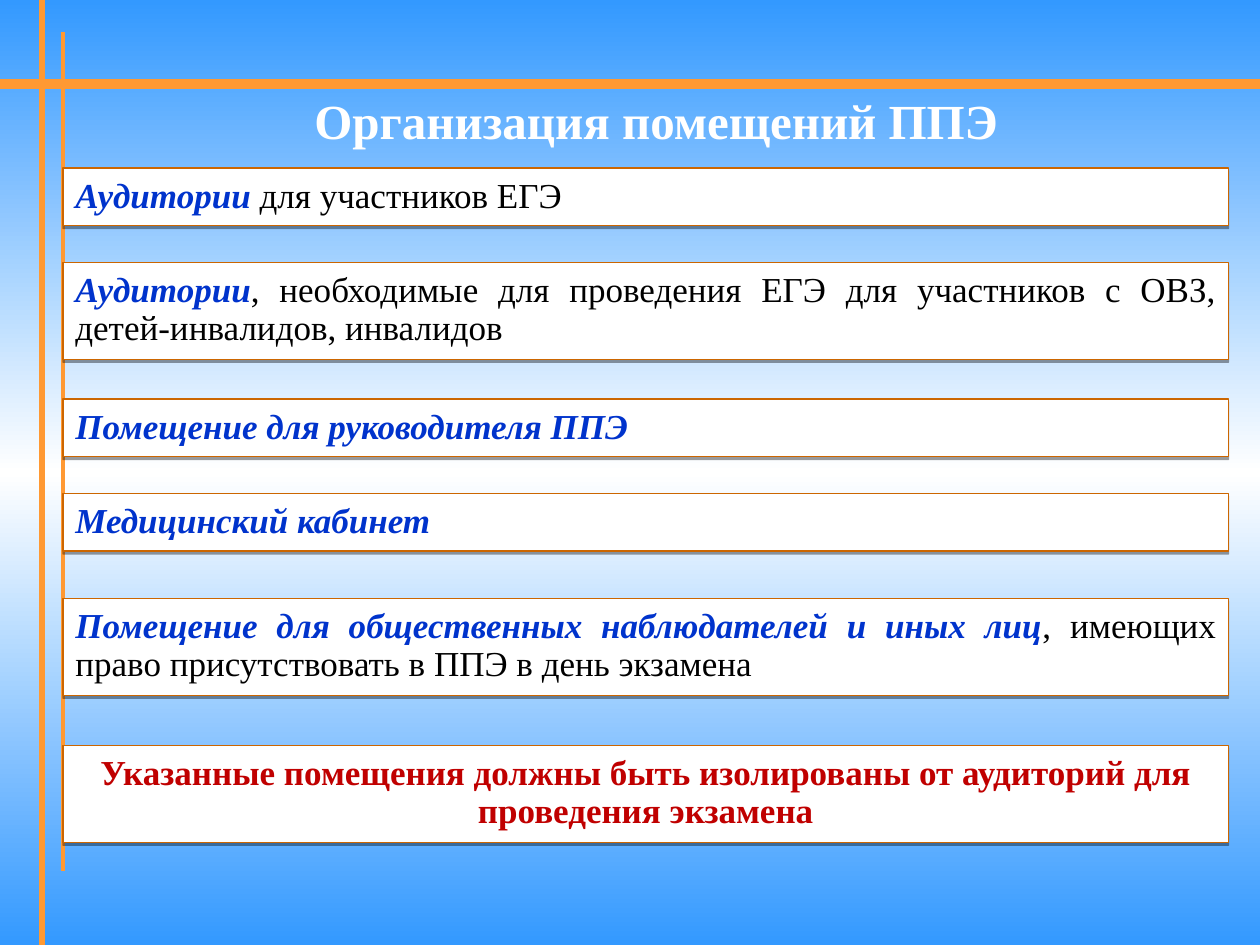
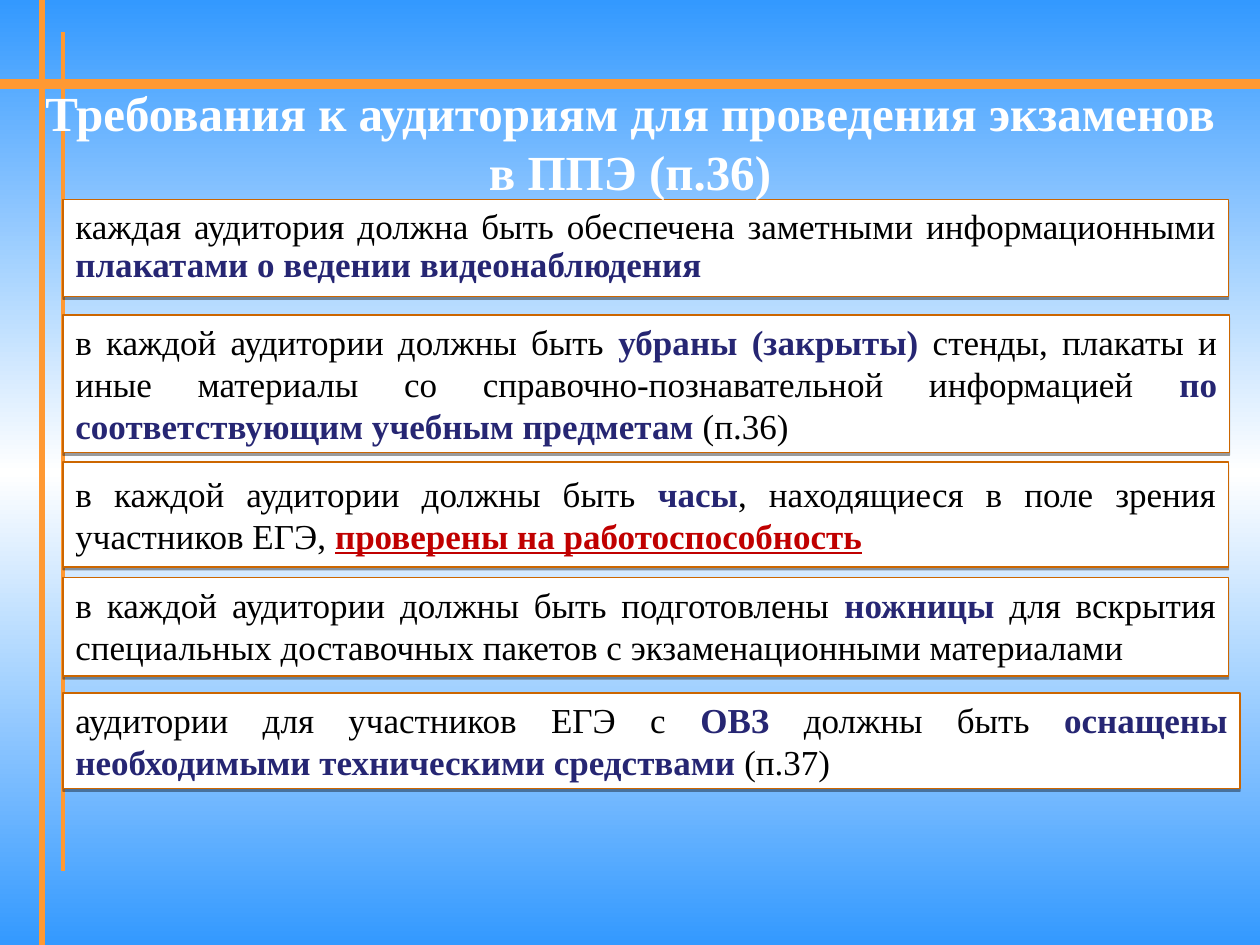
"""Build two slides on exam rooms, laid out on a grid of 120 by 90 cells."""
from copy import deepcopy
from dataclasses import dataclass

from lxml import etree
from pptx import Presentation
from pptx import util as u
from pptx.dml.color import RGBColor
from pptx.enum import shapes, text
from pptx.oxml import ns

WIDE, HIGH = u.Inches(10), u.Inches(7.5)
COLS, ROWS = 120, 90
LEFT, SPAN = 6, 111
ONE, TWO = 5.5, 9.25
ALIGN = text.PP_ALIGN


@dataclass(frozen=True)
class Theme:
    """Colours, font and type sizes of both slides."""
    font: str = "Times New Roman"
    head: int = 28
    body: int = 20
    sky: str = "3399FF"
    white: str = "FFFFFF"
    band: str = "FF9933"
    edge: str = "CC6600"
    ink: str = "000000"
    blue: str = "0033CC"
    navy: str = "262673"
    red: str = "C00000"


T = Theme()
PLAIN = dict(color=T.ink)
TERM = dict(color=T.blue, bold=True, italic=True)
KEY = dict(color=T.navy, bold=True)
ALERT = dict(color=T.red, bold=True)
TITLE = dict(color=T.white, bold=True, size=T.head)

ROOMS = [
    (16, ONE, [("Аудитории ", TERM), ("для участников ЕГЭ", PLAIN)]),
    (25, TWO, [("Аудитории", TERM),
               (", необходимые для проведения ЕГЭ для участников с ОВЗ, "
                "детей-инвалидов, инвалидов", PLAIN)]),
    (38, ONE, [("Помещение для руководителя ППЭ", TERM)]),
    (47, ONE, [("Медицинский кабинет", TERM)]),
    (57, TWO, [("Помещение для общественных наблюдателей и иных лиц", TERM),
               (", имеющих право присутствовать в ППЭ в день экзамена", PLAIN)]),
]
NOTE = [("Указанные помещения должны быть изолированы от аудиторий для "
         "проведения экзамена", ALERT)]
POSTERS = [("каждая аудитория должна быть обеспечена заметными информационными ", PLAIN),
           ("плакатами о ведении видеонаблюдения", KEY)]
STANDS = [("в каждой аудитории должны быть ", PLAIN), ("убраны (закрыты) ", KEY),
          ("стенды, плакаты и иные материалы со справочно-познавательной "
           "информацией ", PLAIN),
          ("по соответствующим учебным предметам", KEY), (" (п.36)", PLAIN)]
CLOCK = [("в каждой аудитории должны быть ", PLAIN), ("часы", KEY),
         (", находящиеся в поле зрения участников ЕГЭ, ", PLAIN),
         ("проверены на работоспособность", dict(ALERT, under=True))]
KNIVES = [("в каждой аудитории должны быть подготовлены ", PLAIN), ("ножницы", KEY),
          (" для вскрытия специальных доставочных пакетов с экзаменационными "
           "материалами", PLAIN)]
TOOLS = [("аудитории для участников ЕГЭ с ", PLAIN), ("ОВЗ", KEY),
         (" должны быть ", PLAIN),
         ("оснащены необходимыми техническими средствами", KEY), (" (п.37)", PLAIN)]


def grid(x, y):
    """Turn a column and a row into slide lengths."""
    return round(WIDE * x / COLS), round(HIGH * y / ROWS)


def rgb(code):
    """Give the colour for a hex code."""
    return RGBColor.from_string(code)


def write(para, words, color=T.ink, size=T.body, bold=False, italic=False, under=False):
    """Add one formatted run to a paragraph."""
    run = para.add_run()
    run.text = words
    font = run.font
    font.name, font.size, font.color.rgb = T.font, u.Pt(size), rgb(color)
    font.bold, font.italic, font.underline = bold, italic, under


def fill_text(frame, runs, align, space=None, pad=0.05):
    """Set up a text frame and write its runs."""
    frame.word_wrap = True
    frame.vertical_anchor = text.MSO_ANCHOR.TOP
    frame.margin_left = frame.margin_right = u.Inches(0.1)
    frame.margin_top = frame.margin_bottom = u.Inches(pad)
    para = frame.paragraphs[0]
    para.alignment = align
    if space:
        para.line_spacing = space
    for words, form in runs:
        write(para, words, **form)


def add_title(slide, words, x, y, w, h, anchor=text.MSO_ANCHOR.TOP):
    """Add a centred white title."""
    frame = slide.shapes.add_textbox(*grid(x, y), *grid(w, h)).text_frame
    fill_text(frame, [(words, TITLE)], ALIGN.CENTER)
    frame.vertical_anchor = anchor


def add_shade(shape):
    """Give a shape a thin shadow straight below it."""
    shape.shadow.inherit = False
    effects = shape.element.spPr.find(ns.qn("a:effectLst"))
    outer = etree.SubElement(effects, ns.qn("a:outerShdw"), blurRad="0", dist="20000",
                             dir="5400000", rotWithShape="0")
    color = etree.SubElement(outer, ns.qn("a:srgbClr"), val=T.ink)
    etree.SubElement(color, ns.qn("a:alpha"), val="38000")


def add_card(slide, y, h, runs, w=SPAN, align=ALIGN.JUSTIFY, **form):
    """Add a white card with an orange edge."""
    card = slide.shapes.add_shape(shapes.MSO_SHAPE.RECTANGLE, *grid(LEFT, y), *grid(w, h))
    card.fill.solid()
    card.fill.fore_color.rgb = rgb(T.white)
    card.line.color.rgb = rgb(T.edge)
    card.line.width = u.Pt(0.75)
    add_shade(card)
    fill_text(card.text_frame, runs, align, **form)
    card.text_frame.auto_size = text.MSO_AUTO_SIZE.SHAPE_TO_FIT_TEXT


def add_rule(slide, start, end, width):
    """Draw one straight orange rule."""
    rule = slide.shapes.add_connector(shapes.MSO_CONNECTOR.STRAIGHT, *grid(*start), *grid(*end))
    rule.line.color.rgb = rgb(T.band)
    rule.line.width = u.Pt(width)
    etree.SubElement(rule.element.spPr, ns.qn("a:effectLst"))


def paint(master):
    """Give the master a blue, white and blue gradient."""
    fill = master.background.fill
    fill.gradient()
    fill.gradient_angle = 270
    stops = master.element.xpath(".//p:bg//a:gsLst")[0]
    stops.append(deepcopy(stops[0]))
    for stop, color, place in zip(fill.gradient_stops, (T.sky, T.white, T.sky), (0, 0.5, 1)):
        stop.color.rgb = rgb(color)
        stop.position = place


def new_slide(deck):
    """Add a blank slide with the three shared rules."""
    slide = deck.slides.add_slide(deck.slide_layouts[6])
    add_rule(slide, (0, 8), (COLS, 8), 6)
    add_rule(slide, (4, 0), (4, ROWS), 3)
    add_rule(slide, (LEFT, 3), (LEFT, 83), 2.25)
    return slide


def add_rooms(deck):
    """Build the slide that lists the rooms."""
    slide = new_slide(deck)
    add_title(slide, "Организация помещений ППЭ", LEFT, 8, 113, 5)
    for y, h, runs in ROOMS:
        add_card(slide, y, h, runs, space=0.9, pad=0.08)
    add_card(slide, 71, TWO, NOTE, align=ALIGN.CENTER, space=0.9, pad=0.08)


def add_needs(deck):
    """Build the slide that lists what each room needs."""
    slide = new_slide(deck)
    add_card(slide, 19, TWO, POSTERS, space=0.9, pad=0.08)
    add_card(slide, 30, 13.1, STANDS, w=111.1, pad=0.04)
    add_card(slide, 44, 10, CLOCK, pad=0.08)
    add_card(slide, 55, 9.4, KNIVES)
    add_card(slide, 66, 9.1, TOOLS, w=112.1, pad=0.04)
    add_title(slide, "Требования к аудиториям для проведения экзаменов в ППЭ (п.36)",
              2, 8, 116, 11, anchor=text.MSO_ANCHOR.MIDDLE)


def main():
    """Build and save the deck."""
    deck = Presentation()
    deck.slide_width, deck.slide_height = WIDE, HIGH
    paint(deck.slide_master)
    add_rooms(deck)
    add_needs(deck)
    deck.save("out.pptx")


if __name__ == "__main__":
    main()
